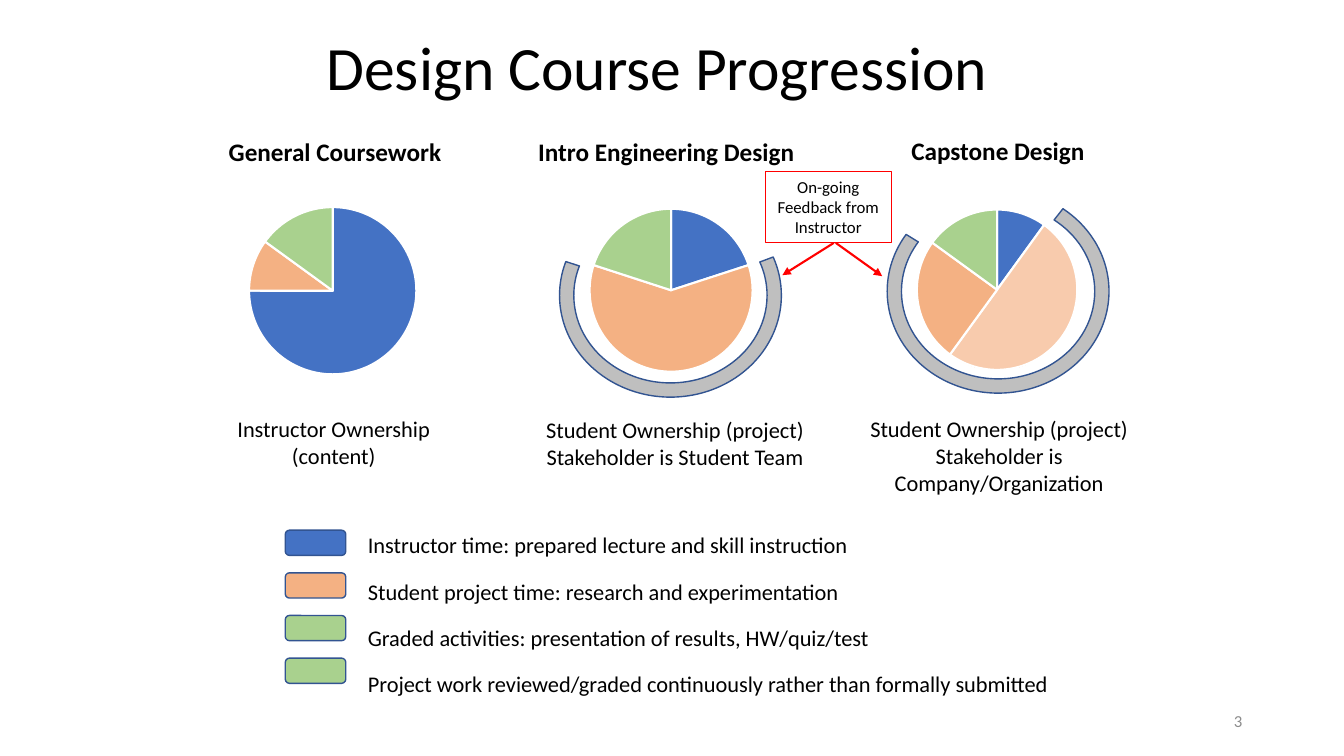
from pptx import Presentation
from pptx.chart.data import CategoryChartData as Data
from pptx.dml.color import RGBColor as RGB
from pptx.enum.chart import XL_CHART_TYPE as Kind
from pptx.enum.dml import MSO_PATTERN as Pattern
from pptx.enum.shapes import MSO_CONNECTOR as Link, MSO_SHAPE as Shape
from pptx.enum.text import MSO_ANCHOR as Anchor, PP_ALIGN as Align
from pptx.oxml import parse_xml
from pptx.oxml.ns import nsdecls, qn
from pptx.util import Inches, Pt

BLUE, ORANGE, GREEN, PEACH = "4472C4", "F4B183", "A9D18E", "F8CBAD"
EDGE, GREY, RED = "325491", "BFBFBF", "FF0000"
TITLE = "Design Course Progression"
HEADS = [
    ("General Coursework", (2.17, 1.3, 2.35, 0.4)),
    ("Intro Engineering Design", (5.24, 1.3, 2.74, 0.4)),
    ("Capstone Design", (8.94, 1.29, 1.94, 0.4)),
]
NOTES = [
    (["Instructor Ownership (content)"], (2.04, 4.07, 2.54, 0.64)),
    (["Student Ownership (project)", "Stakeholder is Student Team"],
     (5.24, 4.08, 2.91, 0.64)),
    (["Student Ownership (project)", "Stakeholder is Company/Organization"],
     (8.32, 4.07, 3.18, 0.91)),
]
PIES = [
    ((2.08, 1.92, 2.44, 1.93), (0.16, 0.68), [75, 10, 15],
     [BLUE, ORANGE, GREEN]),
    ((5.21, 1.94, 2.64, 1.88), (0.227, 0.642), [20, 60, 20],
     [BLUE, ORANGE, GREEN]),
    ((8.78, 1.95, 2.22, 1.85), (0.14, 0.72), [10, 50, 25, 15],
     [BLUE, (PEACH, GREEN), ORANGE, GREEN]),
]
ARCS = [
    ((5.55, 1.92, 2.2, 2.02), (97.27, 12.28, 0.07)),
    ((8.8, 1.88, 2.2, 2.02), (88.96, 31.13, 0.07)),
]
KEYS = [
    (BLUE, "Instructor time: prepared lecture and skill instruction"),
    (ORANGE, "Student project time: research and experimentation"),
    (GREEN, "Graded activities: presentation of results, HW/quiz/test"),
    ((GREEN, ORANGE), "Project work reviewed/graded continuously "
     "rather than formally submitted"),
]
ARROWS = [((8.27, 2.41), (7.76, 2.73)), ((8.29, 2.41), (8.75, 2.74))]


def color(code):
    return RGB.from_string(code)


def paint(fill, tone):
    if isinstance(tone, tuple):
        fill.patterned()
        fill.pattern = Pattern.DARK_HORIZONTAL
        fill.fore_color.rgb, fill.back_color.rgb = map(color, tone)
    else:
        fill.solid()
        fill.fore_color.rgb = color(tone)


def stroke(line, tone, width):
    line.color.rgb = color(tone)
    line.width = Pt(width)


def place(shape, box):
    shape.left, shape.top, shape.width, shape.height = map(Inches, box)


def write(shape, lines, size=16, tone="000000", bold=False, align=Align.CENTER,
          anchor=Anchor.TOP, wrap=True, space=None, before=0):
    frame = shape.text_frame
    frame.text = "\n".join(lines)
    frame.word_wrap, frame.vertical_anchor = wrap, anchor
    for para in frame.paragraphs:
        para.alignment, para.line_spacing = align, space
        para.space_before = Pt(before)
        font = para.runs[0].font
        font.name, font.size, font.bold = "Calibri", Pt(size), bold
        font.color.rgb = color(tone)


def label(slide, lines, box, **style):
    write(slide.shapes.add_textbox(*map(Inches, box)), lines, **style)


def block(slide, kind, box, tone, edge=EDGE, width=1):
    shape = slide.shapes.add_shape(kind, *map(Inches, box))
    shape.shadow.inherit = False
    paint(shape.fill, tone)
    stroke(shape.line, edge, width)
    return shape


def pie(slide, box, span, values, tones):
    data = Data()
    data.categories = [str(i + 1) for i in range(len(values))]
    data.add_series("Series 1", values)
    chart = slide.shapes.add_chart(Kind.PIE, *map(Inches, box), data).chart
    chart.has_legend = chart.has_title = False
    chart.font.name, chart.font.size = "Calibri", Pt(10)
    chart.font.color.rgb = color("000000")
    plot = chart.plots[0]
    plot.vary_by_categories = True
    for i, tone in enumerate(tones):
        form = plot.series[0].points[i].format
        paint(form.fill, tone)
        stroke(form.line, "FFFFFF", 1.5)
    area = chart._chartSpace.chart.plotArea
    for old in area.findall(qn("c:layout")):
        area.remove(old)
    left, width = span
    parts = (("x", left), ("y", 0.07), ("w", width), ("h", 0.86))
    sizes = "".join(f'<c:{name} val="{share}"/>' for name, share in parts)
    area.insert(0, parse_xml(
        f'<c:layout {nsdecls("c")}><c:manualLayout>'
        '<c:layoutTarget val="inner"/><c:xMode val="edge"/>'
        f'<c:yMode val="edge"/>{sizes}</c:manualLayout></c:layout>'))


def arrow(slide, start, end):
    link = slide.shapes.add_connector(
        Link.STRAIGHT, *map(Inches, start + end))
    stroke(link.line, RED, 1.5)
    link.line._get_or_add_ln().append(
        parse_xml(f'<a:tailEnd {nsdecls("a")} type="triangle"/>'))
    link._element.spPr.append(parse_xml(f'<a:effectLst {nsdecls("a")}/>'))


def main():
    """Build the course progression slide."""
    deck = Presentation()
    deck.slide_width, deck.slide_height = Inches(13.33), Inches(7.5)
    slide = deck.slides.add_slide(deck.slide_layouts[5])
    title = slide.shapes.title
    place(title, (2.77, 0.27, 7.5, 0.81))
    write(title, [TITLE], size=44, anchor=Anchor.BOTTOM, space=0.9)
    for args in PIES:
        pie(slide, *args)
    for text, box in HEADS:
        label(slide, [text], box, size=18, bold=True, align=Align.LEFT,
              wrap=False)
    for lines, box in NOTES:
        label(slide, lines, box)
    label(slide, [text for _, text in KEYS], (3.55, 5.17, 7.5, 1.36),
          align=Align.LEFT, space=1.2, before=10)
    for row, (tone, _) in enumerate(KEYS):
        block(slide, Shape.ROUNDED_RECTANGLE,
              (2.83, 5.26 + row * 0.423, 0.6, 0.25), tone)
    for box, turns in ARCS:
        arc = block(slide, Shape.BLOCK_ARC, box, GREY)
        arc._element.spPr.xfrm.set("flipV", "1")
        for i, turn in enumerate(turns):
            arc.adjustments[i] = turn
    note = block(slide, Shape.RECTANGLE, (7.59, 1.7, 1.25, 0.71),
                 "FFFFFF", RED, 0.75)
    write(note, ["On-going Feedback from Instructor"], size=12)
    for start, end in ARROWS:
        arrow(slide, start, end)
    label(slide, ["3"], (9.42, 6.95, 3, 0.4), size=12, tone="8C8C8C",
          align=Align.RIGHT, anchor=Anchor.MIDDLE)
    deck.save("out.pptx")


if __name__ == "__main__":
    main()
